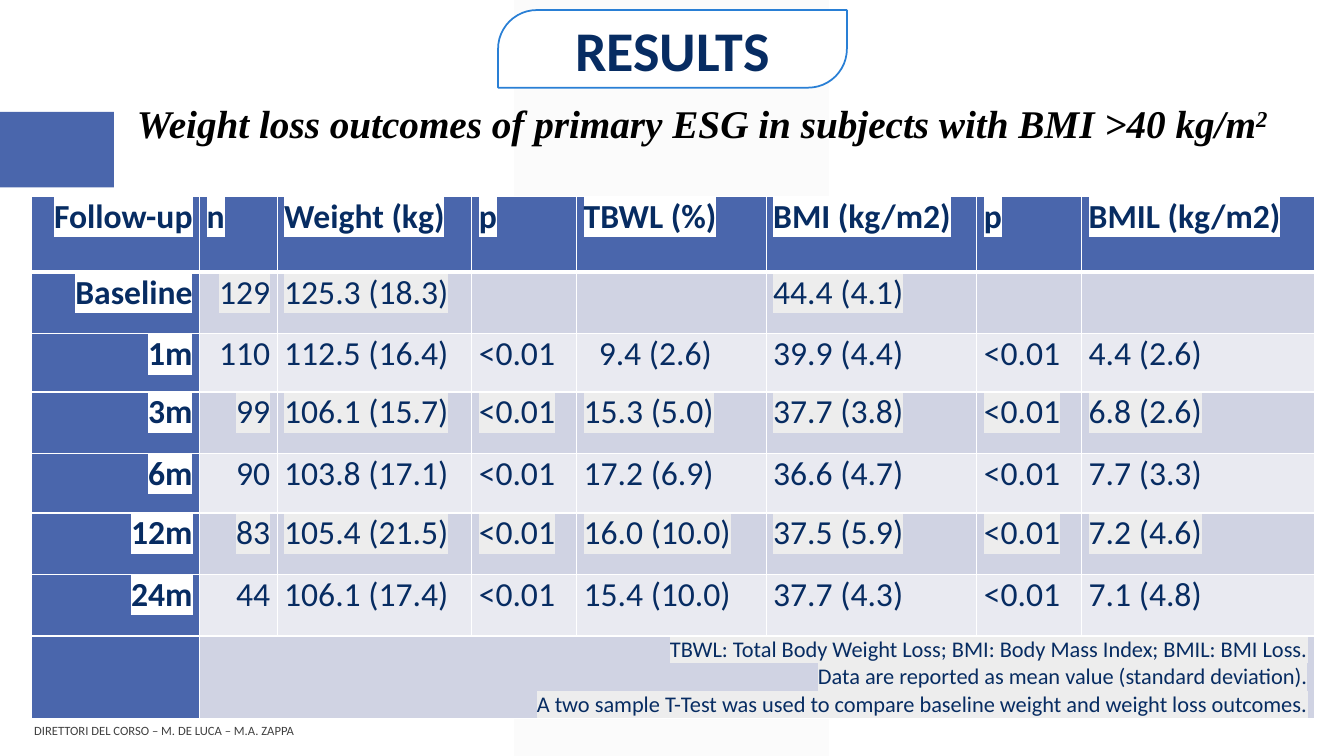
from lxml.etree import SubElement
from pptx import Presentation
from pptx.dml.color import RGBColor
from pptx.enum.shapes import MSO_SHAPE
from pptx.enum.text import MSO_ANCHOR, MSO_AUTO_SIZE, PP_ALIGN
from pptx.oxml.ns import qn
from pptx.util import Inches, Pt

NAVY, BLUE, WHITE = "072C62", "4A66AC", "FFFFFF"
BANDS = ["D0D3E3", "E9EAF1"]
HIGHLIGHT = "EDEDED"

HEADINGS = ["Follow-up", "n", "Weight (kg)", "p", "TBWL (%)",
            "BMI (kg/m2)", "p", "BMIL (kg/m2)"]
OUTCOMES = [
    ["Baseline", "129", "125.3 (18.3)", "", "", "44.4 (4.1)", "", ""],
    ["1m", "110", "112.5 (16.4)", "<0.01", "9.4 (2.6)", "39.9 (4.4)", "<0.01", "4.4 (2.6)"],
    ["3m", "99", "106.1 (15.7)", "<0.01", "15.3 (5.0)", "37.7 (3.8)", "<0.01", "6.8 (2.6)"],
    ["6m", "90", "103.8 (17.1)", "<0.01", "17.2 (6.9)", "36.6 (4.7)", "<0.01", "7.7 (3.3)"],
    ["12m", "83", "105.4 (21.5)", "<0.01", "16.0 (10.0)", "37.5 (5.9)", "<0.01", "7.2 (4.6)"],
    ["24m", "44", "106.1 (17.4)", "<0.01", "15.4 (10.0)", "37.7 (4.3)", "<0.01", "7.1 (4.8)"],
]
FOOTNOTES = [
    "TBWL: Total Body Weight Loss; BMI: Body Mass Index; BMIL: BMI Loss.",
    "Data are reported as mean value (standard deviation).",
    "A two sample T-Test was used to compare baseline weight and weight loss outcomes.",
]
COLUMN_WIDTHS = [1.67, 0.77, 1.93, 1.04, 1.88, 2.09, 1.04, 2.31]
ROW_HEIGHTS = [0.75, 0.61, 0.58, 0.61, 0.59, 0.61, 0.61, 0.81]


def rgb(hex_colour):
    return RGBColor.from_string(hex_colour)


def assign(target, values):
    for name, value in values.items():
        setattr(target, name, value)


class SlideBuilder:
    text_style = {"name": "Calibri", "size": Pt(24), "bold": False, "italic": False}
    cell_style = {"margin_left": Inches(0.07), "margin_right": Inches(0.07),
                  "margin_top": 0, "margin_bottom": 0}

    def __init__(self, slide):
        self.slide = slide

    def run(self, paragraph, wording, colour=NAVY, highlight=None, **style):
        run = paragraph.add_run()
        run.text = wording
        assign(run.font, {**self.text_style, **style})
        run.font.color.rgb = rgb(colour)
        if highlight:
            properties = run.font._element
            marker = SubElement(properties, qn("a:highlight"))
            SubElement(marker, qn("a:srgbClr"), val=highlight)
            properties.find(qn("a:solidFill")).addnext(marker)
        return run

    def shape(self, preset, box, fill, line=None, adjustments=(), opacity=None):
        shape = self.slide.shapes.add_shape(preset, *map(Inches, box))
        shape.shadow.inherit = False
        shape.fill.solid()
        shape.fill.fore_color.rgb = rgb(fill)
        for index, value in enumerate(adjustments):
            shape.adjustments[index] = value
        if opacity:
            colour = shape._element.spPr.find(".//" + qn("a:srgbClr"))
            SubElement(colour, qn("a:alpha"), val=str(opacity * 1000))
        if line:
            shape.line.color.rgb = rgb(line)
            shape.line.width = Pt(1.25)
        else:
            shape.line.fill.background()
        return shape

    def text(self, box, anchor=MSO_ANCHOR.TOP, auto_size=MSO_AUTO_SIZE.NONE):
        frame = self.slide.shapes.add_textbox(*map(Inches, box)).text_frame
        assign(frame, {"word_wrap": True, "vertical_anchor": anchor, "auto_size": auto_size})
        return frame.paragraphs[0]

    def table(self, left, top, widths, heights):
        frame = self.slide.shapes.add_table(
            len(heights), len(widths), Inches(left), Inches(top),
            Inches(sum(widths)), Inches(sum(heights)))
        table = frame.table
        assign(table, {"first_row": False, "horz_banding": False})
        for column, width in zip(table.columns, widths):
            column.width = Inches(width)
        for row, height in zip(table.rows, heights):
            row.height = Inches(height)
        return table

    def cell(self, cell, lines, fill, align, borders, **style):
        assign(cell, self.cell_style)
        properties = cell._tc.get_or_add_tcPr()
        for side, width in borders.items():
            border = SubElement(properties, qn("a:ln" + side), w=str(Pt(width)))
            SubElement(SubElement(border, qn("a:solidFill")), qn("a:srgbClr"), val=WHITE)
        cell.fill.solid()
        cell.fill.fore_color.rgb = rgb(fill)
        frame = cell.text_frame
        for index, line in enumerate(lines):
            paragraph = frame.add_paragraph() if index else frame.paragraphs[0]
            paragraph.alignment = align
            if line:
                self.run(paragraph, line, **style)


def add_outcomes(builder):
    table = builder.table(0.31, 1.95, COLUMN_WIDTHS, ROW_HEIGHTS)
    footer = len(ROW_HEIGHTS) - 1
    table.cell(footer, 1).merge(table.cell(footer, len(HEADINGS) - 1))
    rows = [HEADINGS, *OUTCOMES, [""] * len(HEADINGS)]
    for r, values in enumerate(rows):
        for c, value in enumerate(values):
            is_label = r == 0 or c == 0
            shaded = r % 2 == 1
            right = c == 0 or (c == 1 and r > 0)
            lines, style = [value], {"bold": is_label}
            if r == footer and c == 1:
                lines, style = FOOTNOTES, {"size": Pt(16)}
            builder.cell(
                table.cell(r, c), lines,
                BLUE if is_label else BANDS[not shaded],
                PP_ALIGN.RIGHT if right else PP_ALIGN.LEFT,
                {"L": 1, "R": 1, "T": 3 if r == 1 else 1, "B": 3 if r == 0 else 1},
                highlight=WHITE if is_label else HIGHLIGHT if shaded else None, **style)
    table.cell(2, HEADINGS.index("TBWL (%)")).margin_left = Inches(0.22)


def main():
    presentation = Presentation()
    assign(presentation, {"slide_width": Inches(13.33), "slide_height": Inches(7.5)})
    builder = SlideBuilder(presentation.slides.add_slide(presentation.slide_layouts[6]))

    builder.shape(MSO_SHAPE.PARALLELOGRAM, (5.1, 0, 3.12, 7.5), "F2F2F2",
                  adjustments=[0], opacity=30)
    builder.shape(MSO_SHAPE.RECTANGLE, (0, 1.11, 1.13, 0.75), BLUE)
    directors = builder.text((0.24, 7.05, 5.3, 0.4), MSO_ANCHOR.MIDDLE)
    builder.run(directors, "DIRETTORI DEL CORSO – M. DE LUCA – M.A. ZAPPA",
                "404040", size=Pt(9))

    banner = builder.shape(MSO_SHAPE.ROUND_2_DIAG_RECTANGLE, (4.94, 0.1, 3.46, 0.77),
                           WHITE, "297FD5", [0.5, 0])
    banner.text_frame.vertical_anchor = MSO_ANCHOR.MIDDLE
    title = banner.text_frame.paragraphs[0]
    title.alignment = PP_ALIGN.CENTER
    builder.run(title, "RESULTS", size=Pt(40), bold=True)

    add_outcomes(builder)

    subtitle = builder.text((1.26, 0.94, 11.45, 0.57), auto_size=MSO_AUTO_SIZE.SHAPE_TO_FIT_TEXT)
    serif = {"name": "Times New Roman", "size": Pt(28), "bold": True, "italic": True}
    builder.run(subtitle, "Weight loss outcomes of primary ESG in subjects with BMI >40 kg/m",
                "000000", **serif)
    exponent = builder.run(subtitle, "2", "000000", **serif)
    exponent.font._element.set("baseline", "30000")

    presentation.save("out.pptx")


if __name__ == "__main__":
    main()
